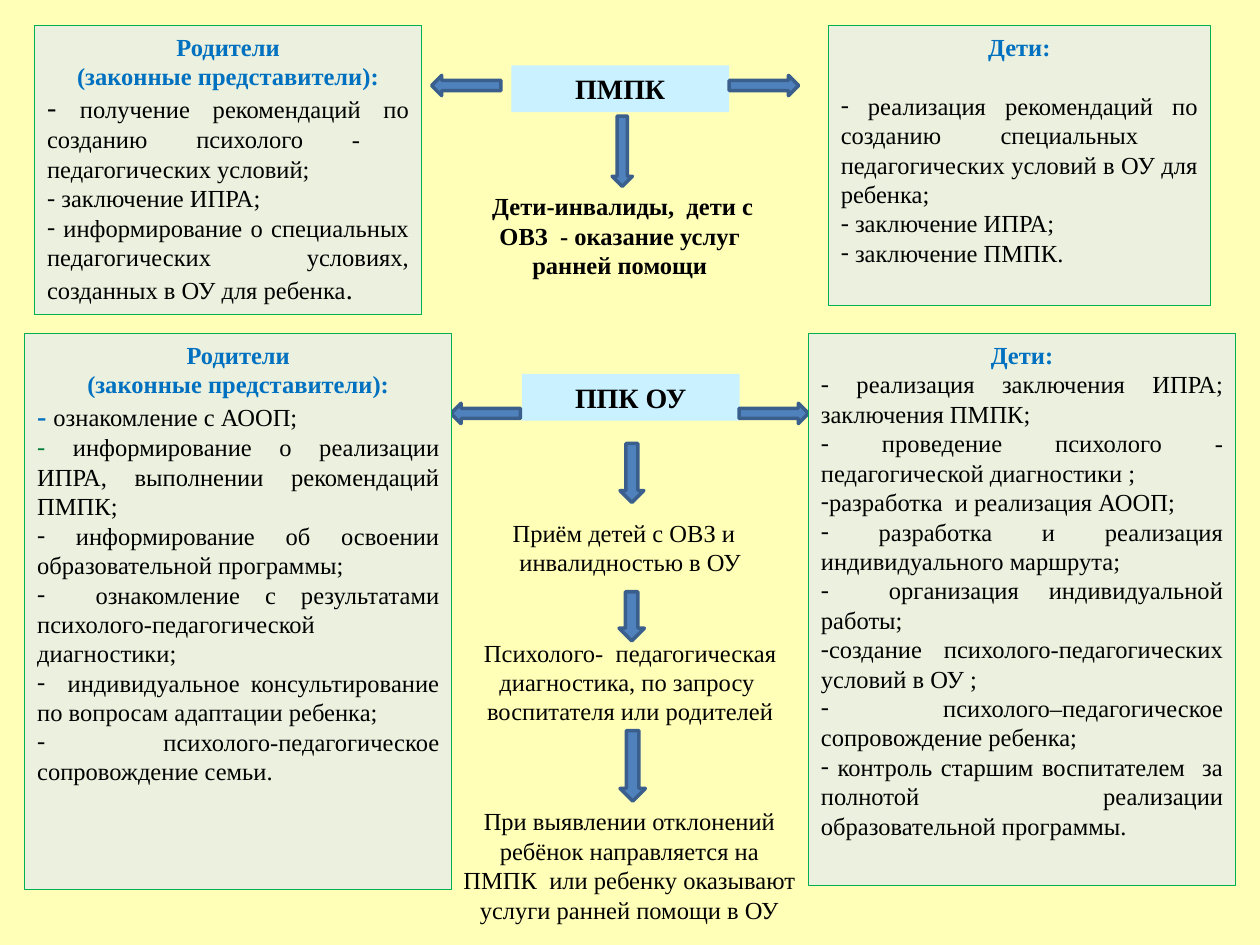
from dataclasses import dataclass

from lxml import etree
from pptx import Presentation
from pptx import util as u
from pptx.dml.color import RGBColor
from pptx.enum import shapes, text
from pptx.oxml.ns import qn

SHAPE = shapes.MSO_SHAPE
ALIGN = text.PP_ALIGN


@dataclass(frozen=True)
class Theme:
    font: str = "Times New Roman"
    page: str = "FFFFB8"
    label: str = "C9F1FF"
    panel: str = "EBF1DE"
    panel_edge: str = "00B050"
    arrow: str = "4F81BD"
    arrow_edge: str = "3A5F8C"
    heading: str = "0070C0"
    body: str = "000000"
    green: str = "007E39"
    size: int = 14
    large: int = 16


THEME = Theme()


def rgb(value):
    return RGBColor.from_string(value)


def add_run(paragraph, words, size=THEME.size, color=THEME.body, bold=False):
    run = paragraph.add_run()
    run.text = words
    font = run.font
    font.name, font.size, font.bold = THEME.font, u.Pt(size), bold
    font.color.rgb = rgb(color)


def write(frame, words, first=False, align=ALIGN.CENTER, bullet=False, before=0, **style):
    """Write one paragraph; words is a string or a list of (string, style) pairs."""
    paragraph = frame.paragraphs[0] if first else frame.add_paragraph()
    paragraph.alignment = align
    paragraph.space_before = u.Pt(before)
    if bullet:
        properties = paragraph._p.get_or_add_pPr()
        properties.set("marL", "0")
        properties.set("indent", "0")
        etree.SubElement(properties, qn("a:buFont")).set("typeface", THEME.font)
        etree.SubElement(properties, qn("a:buChar")).set("char", "-")
    for part, extra in [(words, {})] if isinstance(words, str) else words:
        add_run(paragraph, part, **{**style, **extra})


class Board:
    def __init__(self, slide, theme):
        self.slide, self.theme = slide, theme
        fill = slide.background.fill
        fill.solid()
        fill.fore_color.rgb = rgb(theme.page)

    def shape(self, kind, place, fill, edge=None, width=0.75):
        item = self.slide.shapes.add_shape(kind, *map(u.Cm, place))
        item.shadow.inherit = False
        item.fill.solid()
        item.fill.fore_color.rgb = rgb(fill)
        if edge:
            item.line.color.rgb = rgb(edge)
            item.line.width = u.Pt(width)
        else:
            item.line.fill.background()
        frame = item.text_frame
        frame.word_wrap = True
        frame.vertical_anchor = text.MSO_ANCHOR.TOP
        return frame

    def label(self, place, words):
        frame = self.shape(SHAPE.RECTANGLE, place, self.theme.label)
        write(frame, words, first=True, size=self.theme.large, bold=True)

    def arrow(self, kind, place):
        self.shape(kind, place, self.theme.arrow, self.theme.arrow_edge, 2)

    def step(self, place, words, bold=False):
        frame = self.slide.shapes.add_textbox(*map(u.Cm, place)).text_frame
        frame.word_wrap = True
        write(frame, words, first=True, bold=bold)

    def panel(self, place, headings, items, gap=0):
        """An item is a string, or a list of runs; gap stands above the first item."""
        frame = self.shape(SHAPE.RECTANGLE, place, self.theme.panel, self.theme.panel_edge)
        for i, heading in enumerate(headings):
            write(frame, heading, first=i == 0, color=self.theme.heading, bold=True)
        for i, item in enumerate(items):
            typed_dash = not isinstance(item, str) and item[0][0].startswith("-")
            write(frame, item, align=ALIGN.JUSTIFY, bullet=not typed_dash,
                  before=0 if i else gap)


PARENTS = ["Родители", "(законные представители):"]
CHILDREN = ["Дети:"]
LARGE = {"size": THEME.large}


def main():
    deck = Presentation()
    deck.slide_width, deck.slide_height = u.Cm(25.4), u.Cm(19.05)
    board = Board(deck.slides.add_slide(deck.slide_layouts[6]), THEME)

    # Centre labels
    board.label((10.31, 1.32, 4.39, 0.94), "ПМПК")
    board.label((10.52, 7.54, 4.39, 0.94), "ППК ОУ")

    # Arrows to the panels and down the chain of steps
    for kind, left, top in [
        (SHAPE.LEFT_ARROW, 8.7, 1.52), (SHAPE.RIGHT_ARROW, 14.7, 1.52),
        (SHAPE.LEFT_ARROW, 9.09, 8.13), (SHAPE.RIGHT_ARROW, 14.9, 8.13),
    ]:
        board.arrow(kind, (left, top, 1.4, 0.41))
    for left, top, width, length in [
        (12.34, 2.34, 0.41, 1.42), (12.5, 8.94, 0.48, 1.19),
        (12.48, 11.93, 0.51, 0.99), (12.5, 14.73, 0.51, 1.42),
    ]:
        board.arrow(SHAPE.DOWN_ARROW, (left, top, width, length))

    # Steps
    board.step((9.09, 3.73, 6.81, 2.06),
               " Дети-инвалиды,  дети с ОВЗ  - оказание услуг ранней помощи", bold=True)
    board.step((9.3, 10.31, 6.81, 1.45), "Приём детей с ОВЗ и   инвалидностью в ОУ")
    board.step((9.3, 12.73, 6.81, 2.06),
               "Психолого-  педагогическая диагностика, по запросу  воспитателя или родителей")
    board.step((9.06, 16.13, 7.26, 2.9),
               "При выявлении отклонений ребёнок направляется на ПМПК  или ребенку "
               "оказывают услуги ранней помощи в ОУ")

    # Upper panels
    board.panel((0.7, 0.52, 7.8, 5.82), PARENTS, [
        [(" ", LARGE),
         ("получение рекомендаций по созданию психолого -  педагогических условий;", {})],
        " заключение ИПРА;",
        [(" информирование о специальных педагогических  условиях, "
          "созданных в ОУ для ребенка", {}), (".", LARGE)],
    ])
    board.panel((16.7, 0.52, 7.7, 5.64), CHILDREN, [
        " реализация рекомендаций по созданию специальных  педагогических условий "
        "в ОУ для ребенка;",
        " заключение ИПРА;",
        " заключение ПМПК.",
    ], gap=16.8)

    # Lower panels
    board.panel((0.5, 6.73, 8.61, 11.2), PARENTS, [
        [("- ", {"size": THEME.large, "color": THEME.heading, "bold": True}),
         ("ознакомление с АООП;", {})],
        [(" ", {"color": THEME.green, "bold": True}),
         ("информирование о реализации ИПРА, выполнении рекомендаций ПМПК;", {})],
        " информирование об освоении образовательной программы;",
        "  ознакомление с результатами психолого-педагогической диагностики;",
        "  индивидуальное консультирование по вопросам адаптации ребенка;",
        " психолого-педагогическое сопровождение семьи.",
    ])
    board.panel((16.3, 6.73, 8.61, 11.12), CHILDREN, [
        " реализация заключения ИПРА; заключения ПМПК;",
        " проведение психолого - педагогической диагностики ;",
        "разработка  и реализация АООП;",
        " разработка и реализация индивидуального маршрута;",
        "  организация индивидуальной работы;",
        "создание психолого-педагогических условий в ОУ ;",
        " психолого–педагогическое сопровождение ребенка;",
        " контроль старшим воспитателем  за полнотой реализации образовательной программы.",
    ])

    deck.save("out.pptx")


if __name__ == "__main__":
    main()
